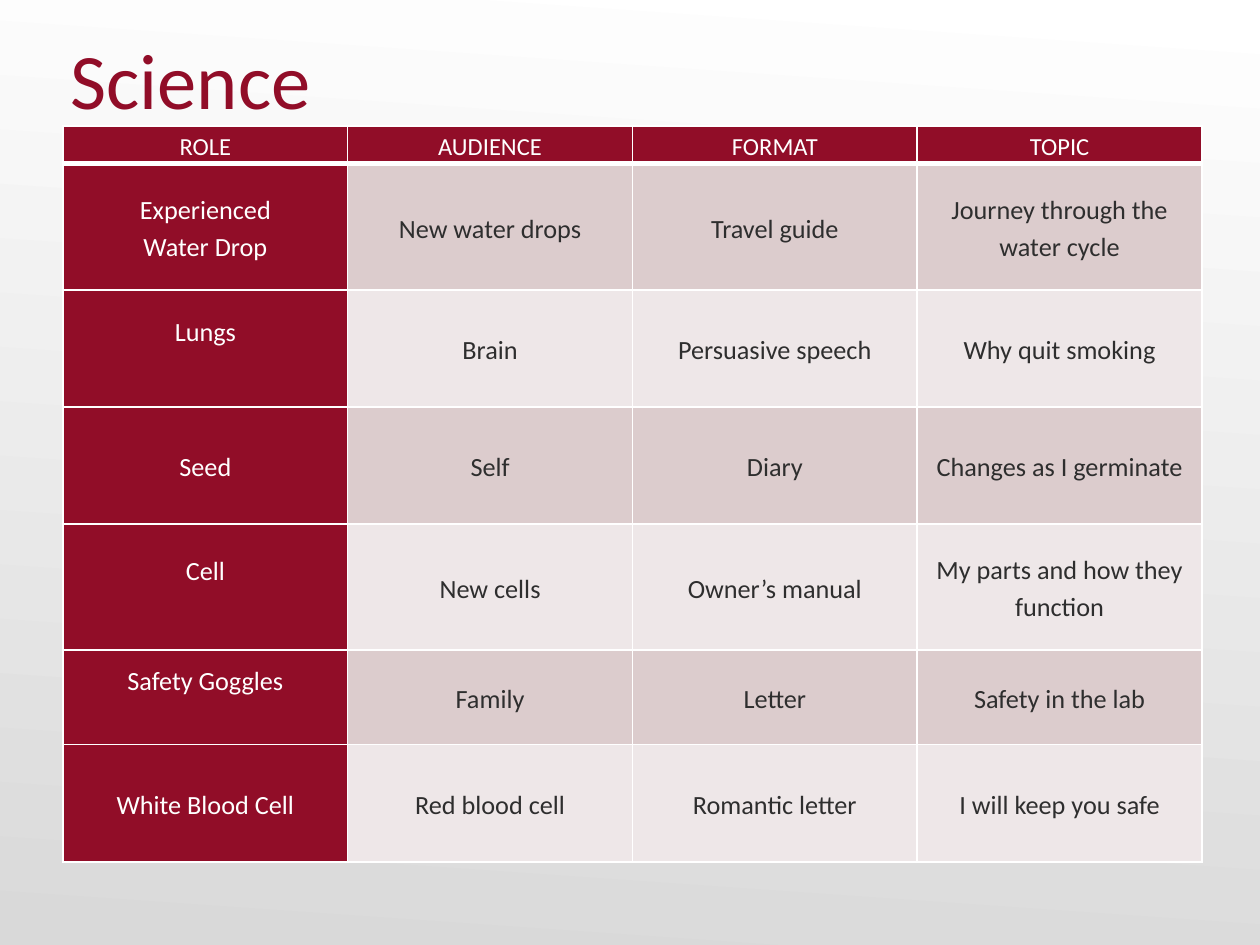
from lxml import etree
from pptx import Presentation
from pptx.dml.color import RGBColor
from pptx.enum.text import MSO_ANCHOR, PP_ALIGN
from pptx.oxml.ns import qn
from pptx.util import Inches, Pt

LEFT, CENTER = PP_ALIGN.LEFT, PP_ALIGN.CENTER
MIDDLE, BOTTOM = MSO_ANCHOR.MIDDLE, MSO_ANCHOR.BOTTOM
CRIMSON, WHITE, INK = "910D28", "FFFFFF", "2E2E2E"
BANDS = ["DCCCCD", "EEE7E8"]

TITLE = "Science"
HEADERS = ["ROLE", "AUDIENCE", "FORMAT", "TOPIC"]
# Row height, whether the role sits one line higher, and the four texts
ASSIGNMENTS = [
    (1.0, False, ["Experienced\nWater Drop", "New water drops", "Travel guide",
                  "Journey through the water cycle"]),
    (0.93, True, ["Lungs", "Brain", "Persuasive speech", "Why quit smoking"]),
    (0.93, False, ["Seed", "Self", "Diary", "Changes as I germinate"]),
    (1.0, True, ["Cell", "New cells", "Owner’s manual",
                 "My parts and how they function"]),
    (0.75, True, ["Safety Goggles", "Family", "Letter", "Safety in the lab"]),
    (0.93, False, ["White Blood Cell", "Red blood cell", "Romantic letter",
                   "I will keep you safe"]),
]
HEADER_HEIGHT, COLUMN_WIDTH = 0.3, 2.26
RAISED_MARGIN = 0.29  # one line of body text


def color(value):
    return RGBColor.from_string(value)


def write_text(frame, text, *, size, ink, align=CENTER, spacing=1.0):
    for index, line in enumerate(text.split("\n")):
        para = frame.paragraphs[0] if index == 0 else frame.add_paragraph()
        para.alignment = align
        para.line_spacing = spacing
        span = para.add_run()
        span.text = line
        span.font.name = "Calibri"
        span.font.size = Pt(size)
        span.font.color.rgb = color(ink)


def set_borders(cell, bottom_width=1):
    properties = cell._tc.get_or_add_tcPr()
    widths = {"a:lnL": 1, "a:lnR": 1, "a:lnT": 1, "a:lnB": bottom_width}
    for position, (tag, width) in enumerate(widths.items()):
        line = etree.Element(qn(tag), w=str(Pt(width)))
        fill = etree.SubElement(line, qn("a:solidFill"))
        etree.SubElement(fill, qn("a:srgbClr"), val=WHITE)
        properties.insert(position, line)


def fill_cell(cell, text, *, fill, ink, size=15, raised=False, bottom_width=1):
    cell.margin_left = cell.margin_right = Inches(0.06)
    cell.margin_top = 0
    cell.margin_bottom = Inches(RAISED_MARGIN if raised else 0)
    cell.vertical_anchor = MIDDLE
    cell.fill.solid()
    cell.fill.fore_color.rgb = color(fill)
    set_borders(cell, bottom_width)
    write_text(cell.text_frame, text, size=size, ink=ink, spacing=1.15)


deck = Presentation()
deck.slide_width, deck.slide_height = Inches(10), Inches(7.5)
page = deck.slides.add_slide(deck.slide_layouts[6])

# Background: white fading to grey, slightly tilted
background = page.background.fill
background.gradient()
background.gradient_angle = 266
for stop, shade in zip(background.gradient_stops, [WHITE, "D9D9D9"]):
    stop.color.rgb = color(shade)

# Title
box = page.shapes.add_textbox(Inches(0), Inches(0.24), Inches(4.08), Inches(0.75))
frame = box.text_frame
frame.word_wrap = True
frame.vertical_anchor = BOTTOM
frame.margin_left, frame.margin_top = Inches(0.56), Inches(0.07)
frame.margin_right = frame.margin_bottom = 0
write_text(frame, TITLE, size=44.9, ink=CRIMSON, align=LEFT)

# Table
heights = [HEADER_HEIGHT] + [height for height, _, _ in ASSIGNMENTS]
table = page.shapes.add_table(
    len(heights), len(HEADERS), Inches(0.5), Inches(1),
    Inches(COLUMN_WIDTH * len(HEADERS)), Inches(sum(heights))).table
for column in table.columns:
    column.width = Inches(COLUMN_WIDTH)
for row, height in zip(table.rows, heights):
    row.height = Inches(height)

for column, header in enumerate(HEADERS):
    fill_cell(table.cell(0, column), header, fill=CRIMSON, ink=WHITE, size=14,
              bottom_width=3)
for row, (_, raised, texts) in enumerate(ASSIGNMENTS, start=1):
    for column, text in enumerate(texts):
        is_role = column == 0
        fill_cell(table.cell(row, column), text,
                  fill=CRIMSON if is_role else BANDS[(row - 1) % 2],
                  ink=WHITE if is_role else INK,
                  raised=raised and is_role)

deck.save("out.pptx")
